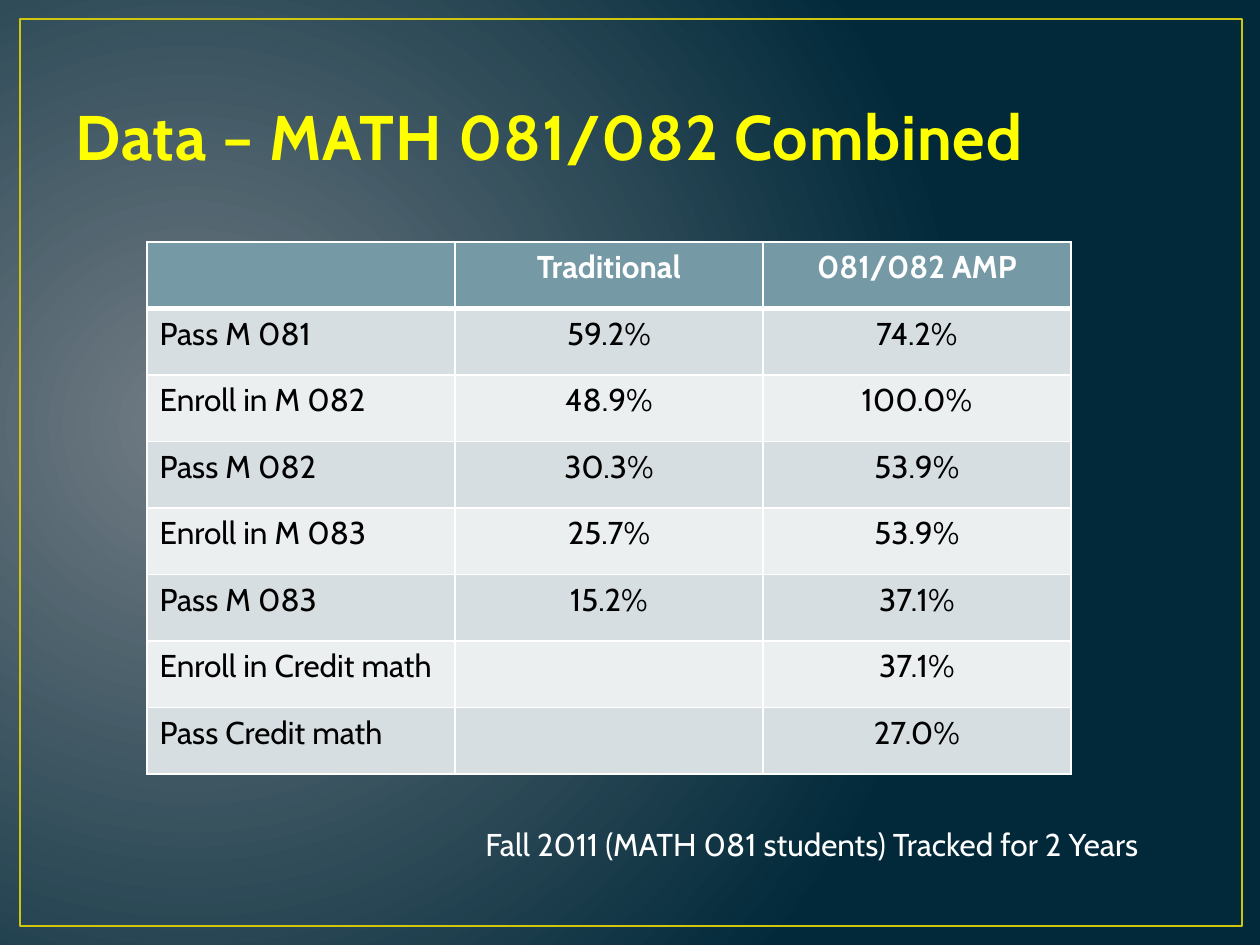
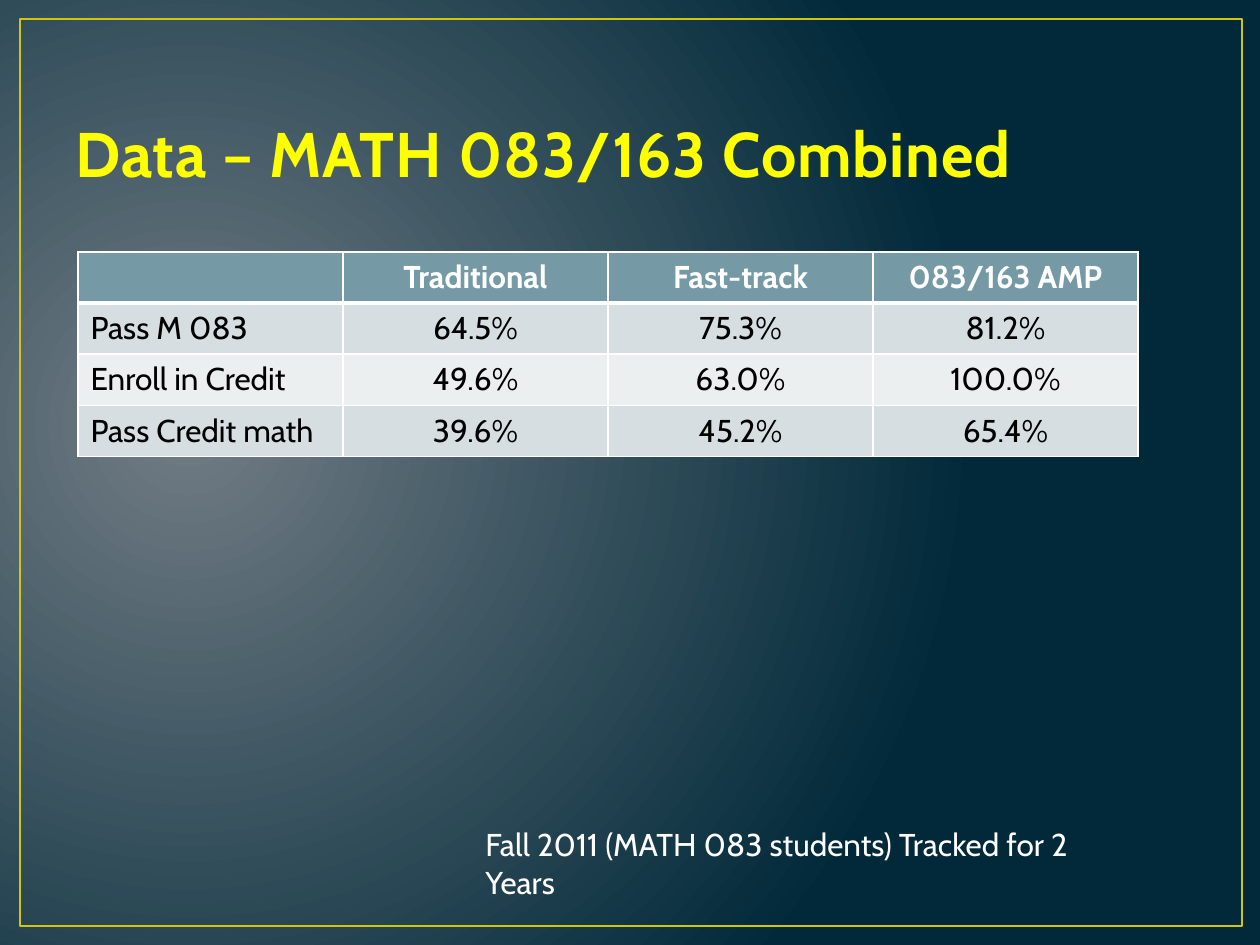
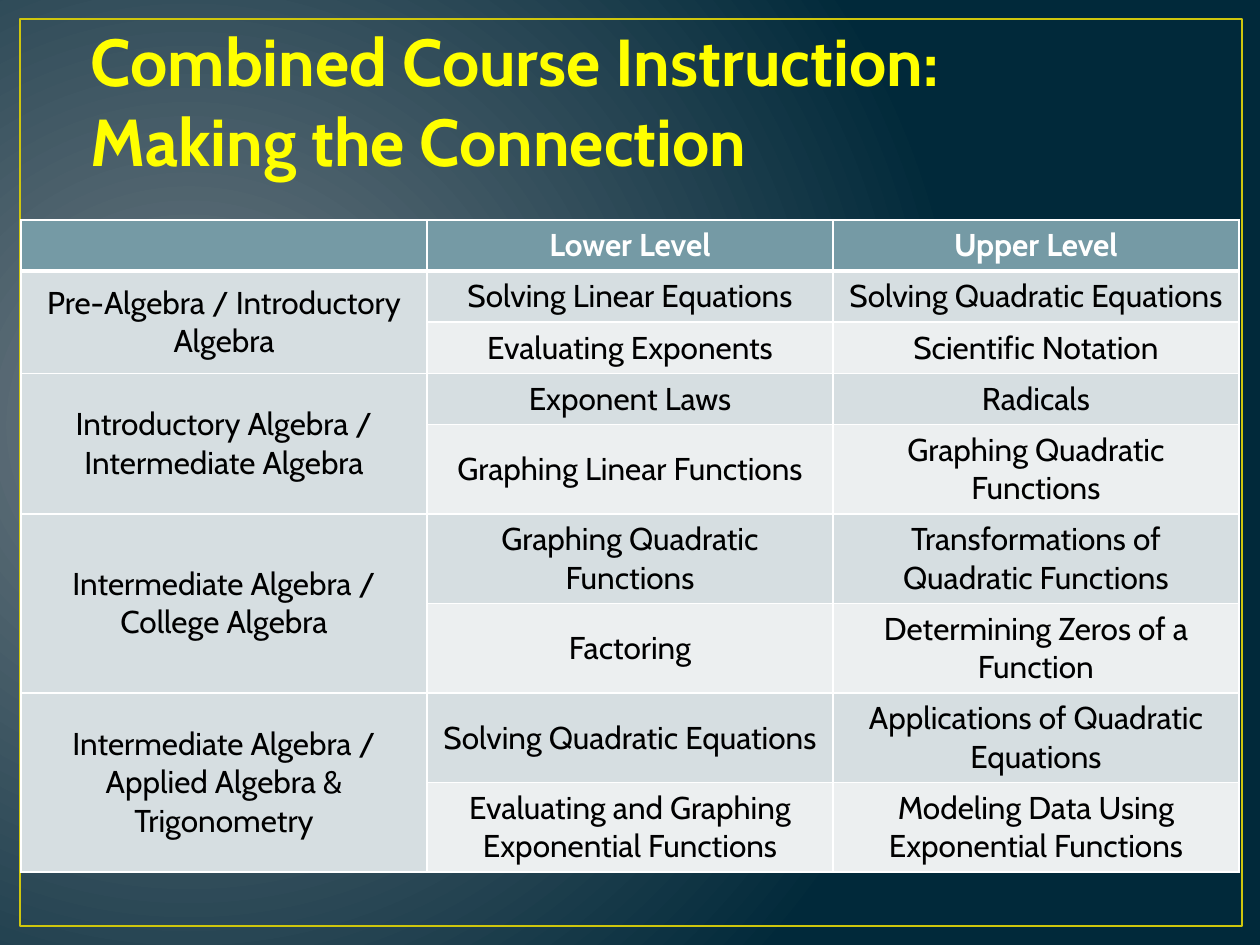
"""Build three slides of course-combination results and topic tables."""
from copy import deepcopy

from lxml import etree
from pptx import Presentation, util as u
from pptx.dml.color import RGBColor
from pptx.enum import shapes, text
from pptx.oxml import ns, parse_xml

COLORS = {
    "glow": "717C84", "night": "01293A", "frame": "CFC60D", "title": "FFFF00",
    "outline": "384F55", "white": "FFFFFF", "black": "000000",
    "header": "759AA5", "odd": "D6DEE1", "even": "ECEFF0",
}
FONT = "Cabin"
EMU_PER_PX = 914400 / 126
LEFT, CENTER = text.PP_ALIGN.LEFT, text.PP_ALIGN.CENTER
TOP, MIDDLE, BOTTOM = text.MSO_ANCHOR.TOP, text.MSO_ANCHOR.MIDDLE, text.MSO_ANCHOR.BOTTOM


def px(length):
    return u.Emu(round(length * EMU_PER_PX))


def write(frame, words, size=18, color="white", bold=False, align=LEFT, anchor=TOP, outline=None):
    frame.word_wrap = True
    frame.vertical_anchor = anchor
    paragraph = frame.paragraphs[0]
    paragraph.text = words
    paragraph.alignment = align
    for run in paragraph.runs:
        run.font.name, run.font.size, run.font.bold = FONT, u.Pt(size), bold
        run.font.color.rgb = RGBColor.from_string(COLORS[color])
        if outline:
            style = run._r.get_or_add_rPr()
            style.set("spc", "50")
            style.insert(0, parse_xml(
                f'<a:ln {ns.nsdecls("a")} w="13335"><a:solidFill>'
                f'<a:srgbClr val="{COLORS[outline]}"/></a:solidFill></a:ln>'))
    for line_break in paragraph._p.findall(ns.qn("a:br")):
        line_break.append(deepcopy(paragraph.runs[0]._r.rPr))


pages = [
    {
        "title": "Data – MATH 081/082 Combined",
        "title_at": (63, 21),
        "title_style": {"size": 36, "anchor": BOTTOM, "outline": "outline"},
        "table_at": (147, 242), "column": 308, "row": 66.5,
        "label_align": LEFT, "cell_anchor": TOP,
        "rows": [
            ("", "Traditional", "081/082 AMP"),
            ("Pass M 081", "59.2%", "74.2%"),
            ("Enroll in M 082", "48.9%", "100.0%"),
            ("Pass M 082", "30.3%", "53.9%"),
            ("Enroll in M 083", "25.7%", "53.9%"),
            ("Pass M 083", "15.2%", "37.1%"),
            ("Enroll in Credit math", "", "37.1%"),
            ("Pass Credit math", "", "27.0%"),
        ],
        "cohort": "Fall 2011 (MATH 081 students) Tracked for 2 Years",
    },
    {
        "title": "Data – MATH 083/163 Combined",
        "title_at": (63, 38),
        "title_style": {"size": 36, "anchor": BOTTOM, "outline": "outline"},
        "table_at": (78, 252), "column": 265, "row": 51,
        "label_align": LEFT, "cell_anchor": TOP,
        "rows": [
            ("", "Traditional", "Fast-track", "083/163 AMP"),
            ("Pass M 083", "64.5%", "75.3%", "81.2%"),
            ("Enroll in Credit", "49.6%", "63.0%", "100.0%"),
            ("Pass Credit math", "39.6%", "45.2%", "65.4%"),
        ],
        "cohort": "Fall 2011 (MATH 083 students) Tracked for 2 Years",
    },
    {
        "title": "Combined Course Instruction: \vMaking the Connection",
        "title_at": (78, 21),
        "title_style": {"size": 37.9, "anchor": MIDDLE},
        "table_at": (21, 220), "column": 406, "row": 51,
        "label_align": CENTER, "cell_anchor": MIDDLE,
        "rows": [
            ("", "Lower Level", "Upper Level"),
            ("Pre-Algebra / Introductory Algebra",
             "Solving Linear Equations", "Solving Quadratic Equations"),
            (None, "Evaluating Exponents", "Scientific Notation"),
            ("Introductory Algebra / Intermediate Algebra", "Exponent Laws", "Radicals"),
            (None, "Graphing Linear Functions", "Graphing Quadratic Functions"),
            ("Intermediate Algebra / College Algebra",
             "Graphing Quadratic Functions", "Transformations of Quadratic Functions"),
            (None, "Factoring", "Determining Zeros of a Function"),
            ("Intermediate Algebra / Applied Algebra & Trigonometry",
             "Solving Quadratic Equations", "Applications of Quadratic Equations"),
            (None, "Evaluating and Graphing Exponential Functions",
             "Modeling Data Using Exponential Functions"),
        ],
        "cohort": None,
    },
]

deck = Presentation()
deck.slide_width, deck.slide_height = px(1260), px(945)
title_only = deck.slide_layouts[5]
slides = [deck.slides.add_slide(title_only) for page in pages]

backdrop = deck.slide_master.background.fill
backdrop.gradient()
for stop, shade in zip(backdrop.gradient_stops, ("glow", "night")):
    stop.color.rgb = RGBColor.from_string(COLORS[shade])
gradient = deck.slide_master.element.find(".//" + ns.qn("a:gradFill"))
for direction in gradient.findall(ns.qn("a:lin")):
    gradient.remove(direction)
circle = etree.SubElement(gradient, ns.qn("a:path"), {"path": "circle"})
etree.SubElement(circle, ns.qn("a:fillToRect"),
                 {"l": "15000", "t": "50000", "r": "85000", "b": "60000"})

border = slides[0].shapes.add_shape(
    shapes.MSO_SHAPE.RECTANGLE, px(20), px(19), px(1222), px(907))
border.shadow.inherit = False
border.fill.background()
border.line.color.rgb = RGBColor.from_string(COLORS["frame"])
border.line.width = u.Pt(1.5)
border.element.nvSpPr.cNvPr.set("id", "20")
title_only.shapes.element.insert(2, border.element)

for slide, page in zip(slides, pages):
    title = slide.shapes.title
    title.left, title.top = (px(edge) for edge in page["title_at"])
    title.width, title.height = px(1134), px(158)
    title.text_frame.auto_size = text.MSO_AUTO_SIZE.NONE
    write(title.text_frame, page["title"], color="title", bold=True, **page["title_style"])

    rows = page["rows"]
    left, top = page["table_at"]
    table = slide.shapes.add_table(
        len(rows), len(rows[0]), px(left), px(top),
        px(page["column"] * len(rows[0])), px(page["row"] * len(rows))).table
    for r, row in enumerate(rows):
        for c, words in enumerate(row):
            cell = table.cell(r, c)
            band = "header" if r == 0 else "odd" if r % 2 else "even"
            cell.fill.solid()
            cell.fill.fore_color.rgb = RGBColor.from_string(COLORS[band])
            thick = {0: "B", 1: "T"}.get(r)
            for order, side in enumerate("LRTB"):
                points = 3 if side == thick else 1
                cell._tc.tcPr.insert(order, parse_xml(
                    f'<a:ln{side} {ns.nsdecls("a")} w="{u.Pt(points)}"><a:solidFill>'
                    f'<a:srgbClr val="{COLORS["white"]}"/></a:solidFill></a:ln{side}>'))
            cell.vertical_anchor = page["cell_anchor"]
            if words is None:
                table.cell(r - 1, c).merge(cell)
            elif words:
                write(cell.text_frame, words, bold=r == 0,
                      color="black" if r else "white", anchor=page["cell_anchor"],
                      align=CENTER if c else page["label_align"])

    if page["cohort"]:
        cohort = slide.shapes.add_textbox(px(473), px(819), px(679), px(50))
        cohort.text_frame.auto_size = text.MSO_AUTO_SIZE.SHAPE_TO_FIT_TEXT
        write(cohort.text_frame, page["cohort"])

deck.save("out.pptx")
